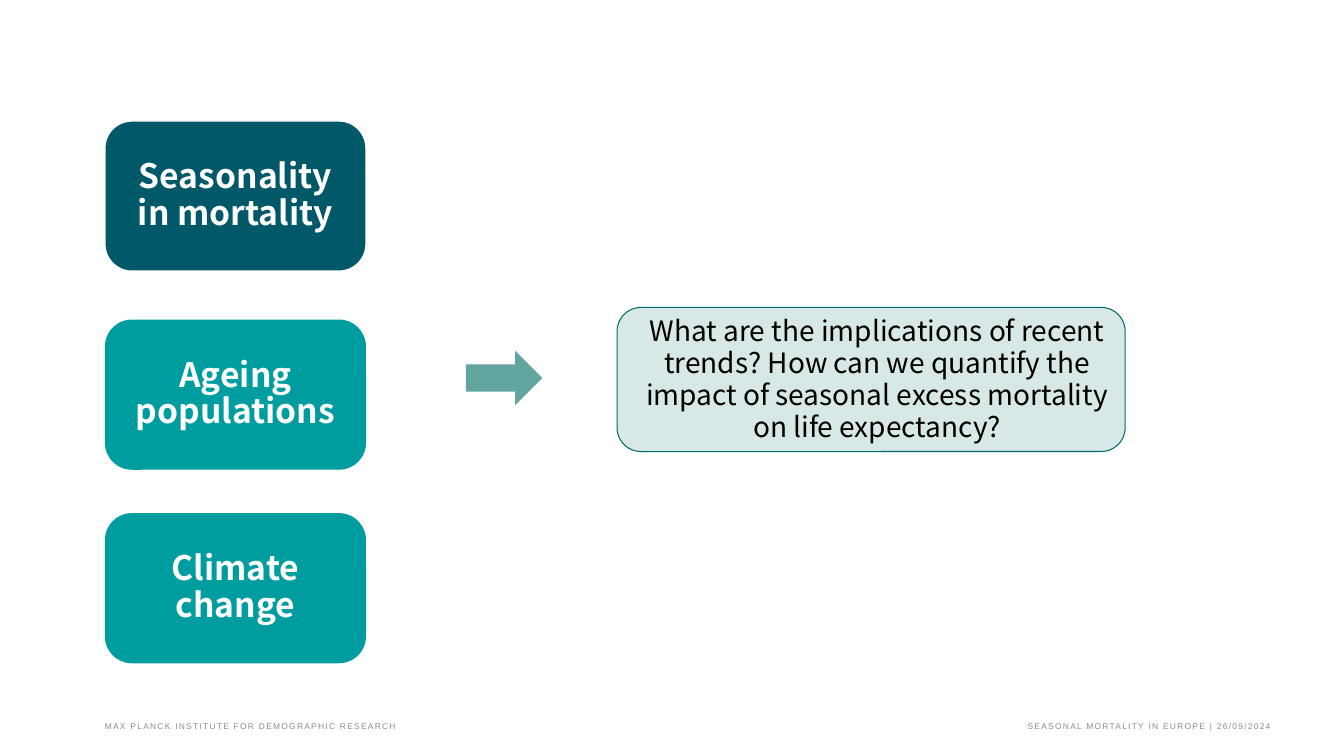
from pptx import Presentation
from pptx.dml.color import RGBColor
from pptx.enum.shapes import MSO_SHAPE
from pptx.enum.text import MSO_ANCHOR, PP_ALIGN
from pptx.oxml.ns import qn
from pptx.util import Pt
from lxml import etree

PX = 9144  # EMU per px, 100 px to the inch
ROUNDED, ARROW = MSO_SHAPE.ROUNDED_RECTANGLE, MSO_SHAPE.RIGHT_ARROW
TOP, MIDDLE, BOTTOM = MSO_ANCHOR.TOP, MSO_ANCHOR.MIDDLE, MSO_ANCHOR.BOTTOM
CENTER = PP_ALIGN.CENTER

BODY_FONT, FOOTER_FONT = "Noto Sans CJK KR", "Arial"
CARD_INSET = 14  # the rounded corners add to this
COLORS = {
    "white": "FFFFFF",
    "black": "000000",
    "gray": "8C8C8C",
    "petrol": "005869",
    "teal": "009DA0",
    "sage": "62A5A0",
    "mint": "D7E8E7",
    "green": "006C66",
}

# Card text, top edge, fill and outline
CARDS = [
    ("Seasonality in mortality", 120, "petrol", "white"),
    ("Ageing populations", 317, "teal", None),
    ("Climate change", 509, "teal", None),
]
QUESTION = ("What are the implications of recent trends? How can we quantify "
            "the impact of seasonal excess mortality on life expectancy?")
INSTITUTE = "MAX PLANCK INSTITUTE FOR DEMOGRAPHIC RESEARCH"
TALK = "SEASONAL MORTALITY IN EUROPE | 26/09/2024"


def color(name):
    return RGBColor.from_string(COLORS[name])


def emu(box):
    return [length * PX for length in box]


def add_filled(slide, kind, box, fill, line=None, line_width=1):
    shape = slide.shapes.add_shape(kind, *emu(box))
    shape.shadow.inherit = False
    shape.fill.solid()
    shape.fill.fore_color.rgb = color(fill)
    if line:
        shape.line.color.rgb = color(line)
        shape.line.width = Pt(line_width)
    else:
        shape.line.fill.background()
    return shape


def write(shape, text, size, ink, font_name, anchor, inset=0, bold=False):
    frame = shape.text_frame
    frame.word_wrap = True
    frame.vertical_anchor = anchor
    frame.margin_left = frame.margin_right = inset * PX
    frame.margin_top = frame.margin_bottom = inset * PX
    frame.text = text
    paragraph = frame.paragraphs[0]
    for run in paragraph.runs:
        run.font.name = font_name
        run.font.size = Pt(size)
        run.font.bold = bold
        run.font.color.rgb = color(ink)
    return paragraph


def add_card(slide, box, text, fill, line):
    card = add_filled(slide, ROUNDED, box, fill, line)
    card.adjustments[0] = 0.18
    paragraph = write(card, text, 24, "white", BODY_FONT, MIDDLE, CARD_INSET, True)
    paragraph.alignment = CENTER
    paragraph.line_spacing = 0.9
    # Space after as a share of the text size
    space = etree.SubElement(paragraph._p.get_or_add_pPr(), qn("a:spcAft"))
    etree.SubElement(space, qn("a:spcPct"), val="35000")


def add_question(slide, box):
    panel = add_filled(slide, ROUNDED, box, "mint", "green", 0.75)
    paragraph = write(panel, QUESTION, 20, "black", BODY_FONT, TOP)
    paragraph.alignment = CENTER
    paragraph.line_spacing = Pt(23)
    paragraph.space_after = Pt(12)
    properties = paragraph._p.get_or_add_pPr()
    properties.set("marL", str(12 * PX))
    properties.set("indent", "0")


def add_footer(slide, box):
    footer = slide.shapes.add_textbox(*emu(box))
    paragraph = write(footer, f"{INSTITUTE}\t{TALK}", 6, "gray", FOOTER_FONT, BOTTOM)
    # Right tab just inside the box edge
    tabs = etree.SubElement(paragraph._p.get_or_add_pPr(), qn("a:tabLst"))
    etree.SubElement(tabs, qn("a:tab"), pos=str((box[2] - 4) * PX), algn="r")
    for run in paragraph.runs:
        run._r.get_or_add_rPr().set("spc", "90")


def main():
    presentation = Presentation()
    presentation.slide_width, presentation.slide_height = emu((1333, 750))
    slide = presentation.slides.add_slide(presentation.slide_layouts[6])

    # Footer
    add_footer(slide, (104, 705, 1160, 20))
    # Research question and the arrow leading to it
    add_question(slide, (612, 305, 504, 143))
    add_filled(slide, ARROW, (462, 348, 76, 54), "sage")
    # Themes
    for text, top, fill, line in CARDS:
        add_card(slide, (104, top, 259, 149), text, fill, line)

    presentation.save("out.pptx")


if __name__ == "__main__":
    main()
